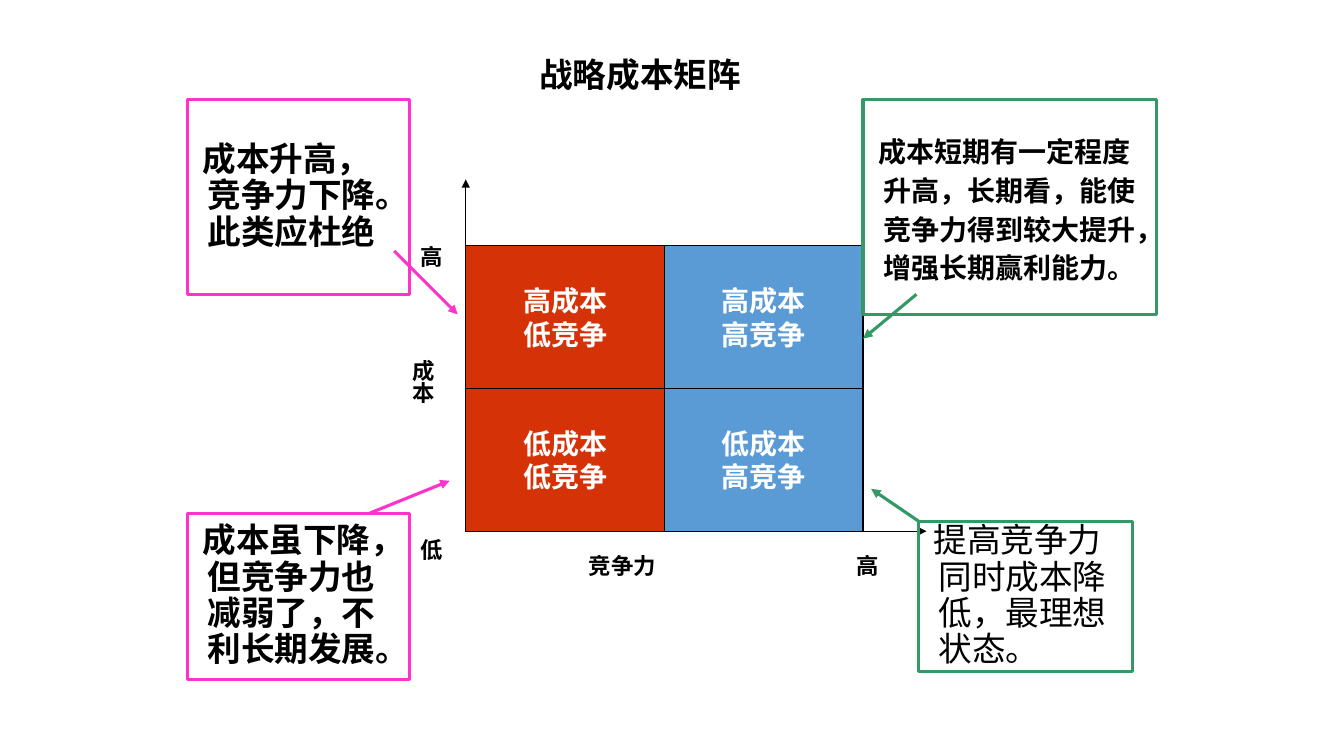
from dataclasses import dataclass

from lxml import etree
from pptx import Presentation
from pptx.dml.color import RGBColor
from pptx.enum.shapes import MSO_CONNECTOR, MSO_SHAPE
from pptx.enum.text import MSO_ANCHOR, MSO_AUTO_SIZE, PP_ALIGN
from pptx.oxml.ns import qn
from pptx.util import Inches, Pt

RECT = MSO_SHAPE.RECTANGLE
STRAIGHT = MSO_CONNECTOR.STRAIGHT
MIDDLE, TOP = MSO_ANCHOR.MIDDLE, MSO_ANCHOR.TOP
LEFT, CENTER = PP_ALIGN.LEFT, PP_ALIGN.CENTER
GROW = MSO_AUTO_SIZE.SHAPE_TO_FIT_TEXT


@dataclass(frozen=True)
class Theme:
    black: str = "000000"
    white: str = "FFFFFF"
    red: str = "D53307"
    blue: str = "5B9BD5"
    green: str = "339966"
    pink: str = "FF33CC"
    sans: str = "DejaVu Sans"
    serif: str = "Times New Roman"
    large: int = 24
    medium: int = 20
    small: int = 16
    thin: float = 0.75
    thick: float = 2.25


def assign(target, values):
    for name, value in values.items():
        setattr(target, name, value)


class MatrixSlide:
    def __init__(self, prs, theme):
        self.theme = theme
        self.shapes = prs.slides.add_slide(prs.slide_layouts[6]).shapes

    def box(self, shapes, at, fill=None, line=None, weight=None):
        sp = shapes.add_shape(RECT, *map(Inches, at))
        sp.shadow.inherit = False
        if fill:
            sp.fill.solid()
            sp.fill.fore_color.rgb = RGBColor.from_string(fill)
        else:
            sp.fill.background()
        if line:
            sp.line.color.rgb = RGBColor.from_string(line)
            sp.line.width = Pt(weight)
        else:
            sp.line.fill.background()
        return sp

    def text(self, sp, lines, size, font, frame, para, color=None, bold=True):
        tf = sp.text_frame
        assign(tf, frame)
        for i, line in enumerate(lines):
            p = tf.add_paragraph() if i else tf.paragraphs[0]
            assign(p, para)
            r = p.add_run()
            r.text = line
            assign(r.font, {"size": Pt(size), "name": font, "bold": bold})
            r.font.color.rgb = RGBColor.from_string(color or self.theme.black)
        return p

    def arrow(self, shapes, start, end, color, weight):
        cxn = shapes.add_connector(STRAIGHT, *map(Inches, start + end))
        cxn.line.color.rgb = RGBColor.from_string(color)
        cxn.line.width = Pt(weight)
        ln = cxn.line._get_or_add_ln()
        etree.SubElement(ln, qn("a:tailEnd"), type="triangle")
        etree.SubElement(cxn._element.spPr, qn("a:effectLst"))

    def cell(self, at, lines, fill):
        t = self.theme
        sp = self.box(self.shapes, at, fill, t.black, t.thin)
        self.text(sp, lines, t.medium, t.serif,
                  {"word_wrap": False, "vertical_anchor": MIDDLE},
                  {"alignment": CENTER}, t.white)

    def axis(self, start, end):
        self.arrow(self.shapes, start, end, self.theme.black, self.theme.thin)

    def title(self, at, words):
        t = self.theme
        sp = self.box(self.shapes, at, t.white)
        self.text(sp, [words], t.large, t.sans,
                  {"word_wrap": True, "auto_size": GROW, "vertical_anchor": TOP},
                  {"alignment": CENTER})

    def axis_name(self, at, words, inset, vertical=False):
        t = self.theme
        sp = self.shapes.add_textbox(*map(Inches, at))
        if vertical:
            sp.text_frame._txBody.bodyPr.set("vert", "eaVert")
        self.text(sp, [words], t.small, t.sans,
                  {"word_wrap": True, "auto_size": GROW, **inset}, {"alignment": LEFT})

    def level(self, at, words):
        t = self.theme
        sp = self.shapes.add_textbox(*map(Inches, at))
        self.text(sp, [words], t.small, t.serif,
                  {"word_wrap": False, "auto_size": GROW}, {"alignment": CENTER})

    def callout(self, at, words, color, start, end, size, spacing=0.9, bold=True):
        t = self.theme
        shapes = self.shapes.add_group_shape().shapes
        sp = self.box(shapes, at, line=color, weight=t.thick)
        p = self.text(sp, [words], size, t.sans,
                      {"word_wrap": True, "vertical_anchor": MIDDLE},
                      {"alignment": LEFT, "line_spacing": spacing}, bold=bold)
        pPr = p._p.get_or_add_pPr()
        pPr.set("marL", str(Inches(0.1)))
        pPr.set("indent", str(Inches(-0.05)))
        self.arrow(shapes, start, end, color, t.thick)


def main():
    prs = Presentation()
    assign(prs, {"slide_width": Inches(13.33), "slide_height": Inches(7.5)})
    t = Theme()
    s = MatrixSlide(prs, t)

    left, top, width, height = 4.62, 2.44, 1.97, 1.415
    bottom = top + 2 * height
    for row, cost in enumerate(("高成本", "低成本")):
        for col, (rivalry, fill) in enumerate((("低竞争", t.red), ("高竞争", t.blue))):
            at = (left + col * width, top + row * height, width, height)
            s.cell(at, (cost, rivalry), fill)

    s.axis((left, 4.93), (left, 1.78))
    s.axis((left, bottom), (9.19, bottom))
    s.axis_name((5.64, 5.43, 1.42, 0.37), "竞争力", {"margin_left": Inches(0.2)})
    s.axis_name((3.91, 3.38, 0.47, 1.31), "成本", {"margin_top": Inches(0.19)}, True)
    for x, y, words in ((4.07, 5.27, "低"), (8.4, 5.43, "高"), (4.07, 2.36, "高")):
        s.level((x, y, 0.42, 0.37), words)
    s.title((5.13, 0.49, 2.44, 0.5), "战略成本矩阵")

    s.callout((8.56, 0.99, 2.91, 2.13),
              "成本短期有一定程度升高，长期看，能使竞争力得到较大提升，增强长期赢利能力。",
              t.green, (9.09, 2.92), (8.56, 3.36), t.medium, spacing=1.15)
    s.callout((1.86, 0.99, 2.2, 1.93), "成本升高，竞争力下降。此类应杜绝",
              t.pink, (3.91, 2.49), (4.54, 3.12), t.large)
    s.callout((1.86, 5.09, 2.2, 1.65), "成本虽下降，但竞争力也减弱了，不利长期发展。",
              t.pink, (3.67, 5.09), (4.46, 4.77), t.large)
    s.callout((9.11, 5.17, 2.12, 1.49), "提高竞争力同时成本降低，最理想状态。",
              t.green, (9.11, 5.17), (8.64, 4.85), t.large, bold=False)
    prs.save("out.pptx")


if __name__ == "__main__":
    main()
